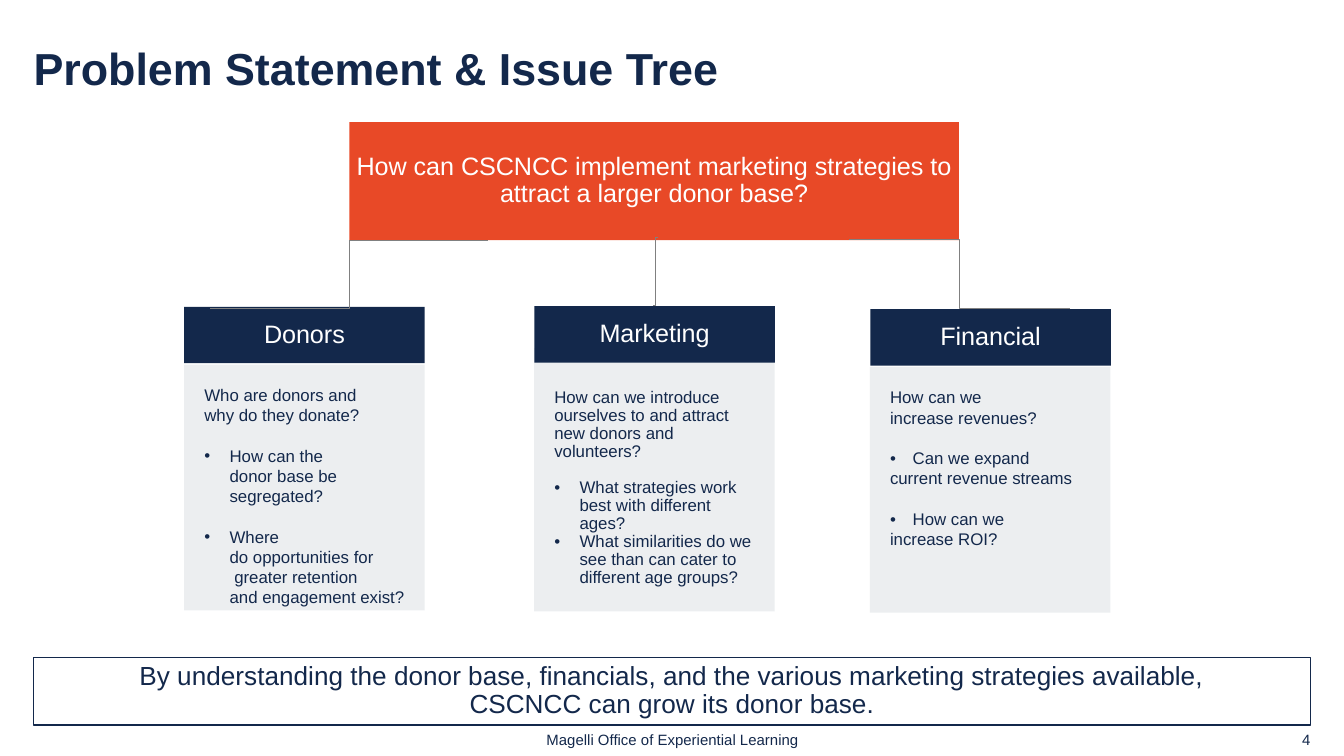
from dataclasses import dataclass
from typing import NamedTuple

from lxml import etree
from pptx import Presentation
from pptx.dml.color import RGBColor
from pptx.enum.shapes import MSO_CONNECTOR, MSO_SHAPE
from pptx.enum.text import MSO_ANCHOR, MSO_AUTO_SIZE, PP_ALIGN
from pptx.oxml.ns import qn
from pptx.util import Inches, Pt

LEFT, MID, RIGHT = PP_ALIGN.LEFT, PP_ALIGN.CENTER, PP_ALIGN.RIGHT
TOP, CENTER = MSO_ANCHOR.TOP, MSO_ANCHOR.MIDDLE
RECT, ELBOW = MSO_SHAPE.RECTANGLE, MSO_CONNECTOR.ELBOW
FIXED = MSO_AUTO_SIZE.NONE

# The slide is a grid of square cells.
COLS, ROWS, CELL = 100, 56.25, Inches(0.1)
# In the wording below, ~ is a no-break space and _ an em space.
SPACES = str.maketrans({"~": chr(160), "_": chr(8195)})


@dataclass(frozen=True)
class Theme:
    face: str = "Arial"
    navy: str = "13284B"
    coral: str = "E84927"
    white: str = "FFFFFF"
    gray: str = "808080"
    tint: int = 8
    title: float = 24
    close: float = 14
    head: float = 13.5
    body: float = 9
    foot: float = 8


class Box(NamedTuple):
    x: float
    y: float
    w: float
    h: float


class Para(NamedTuple):
    text: str
    gap: float = 0
    dot: bool = False


class Style(NamedTuple):
    size: float
    color: str
    align: PP_ALIGN = LEFT
    anchor: MSO_ANCHOR = CENTER
    inset: tuple = (0, 0, 0, 0)
    lead: float = 1
    bold: bool = False


class Card(NamedTuple):
    name: str
    head: Box
    body: Box
    paras: list
    pad: float = 1.5
    lead: float = 1


class Link(NamedTuple):
    x1: float
    y1: float
    x2: float
    y2: float


THEME = Theme()
GAP = 10.9
HANG = 1.88
HEAD = Style(THEME.head, THEME.white, MID, inset=(0.4,) * 4, lead=0.9)

CARDS = [
    Card("Donors", Box(13.7, 22.83, 17.9, 4.2), Box(13.7, 27.13, 17.9, 18.3), [
        Para("Who are donors and why~do they donate?"),
        Para("How can the donor~base be segregated?", GAP, True),
        Para("Where do~opportunities~for ~greater retention "
             "and~engagement exist?", GAP, True),
    ]),
    Card("Marketing", Box(39.75, 22.78, 17.9, 4.2),
         Box(39.74, 25.9, 17.9, 19.6), [
        Para("How can we introduce ourselves~to~and attract new donors "
             "and volunteers?"),
        Para("What strategies work best with different ages?", 9.7, True),
        Para("What similarities do we see than can cater to different "
             "age groups?", 0, True),
    ], pad=3.07, lead=0.89),
    Card("Financial", Box(64.75, 23, 17.9, 4.2), Box(64.72, 27.3, 17.9, 18.3), [
        Para("How can we increase~revenues?"),
        Para("•_Can we expand current~revenue streams", GAP),
        Para("•_How can we increase~ROI?", GAP),
    ]),
]

LINKS = [
    Link(36.3, 17.9, 15.65, 22.93),
    Link(63.2, 17.8, 79.6, 22.97),
    Link(49, 17.7, 48.6, 22.7),
]


def cells(*nums: float) -> list:
    return [round(n * CELL) for n in nums]


def put(item, values: dict) -> None:
    """Set each named attribute of item."""
    for name, value in values.items():
        setattr(item, name, value)


def bullet(para) -> None:
    props = para._p.get_or_add_pPr()
    hang, = cells(HANG)
    props.set("marL", str(hang))
    props.set("indent", str(-hang))
    etree.SubElement(props, qn("a:buFont")).set("typeface", THEME.face)
    etree.SubElement(props, qn("a:buChar")).set("char", "•")


def write(shape, paras: list, style: Style) -> None:
    frame = shape.text_frame
    left, top, right, low = cells(*style.inset)
    put(frame, dict(word_wrap=True, auto_size=FIXED,
                    vertical_anchor=style.anchor, margin_left=left,
                    margin_top=top, margin_right=right, margin_bottom=low))
    for i, item in enumerate(paras):
        para = frame.add_paragraph() if i else frame.paragraphs[0]
        put(para, dict(text=item.text.translate(SPACES),
                       alignment=style.align, line_spacing=style.lead,
                       space_before=Pt(item.gap)))
        if item.dot:
            bullet(para)
        for run in para.runs:
            put(run.font, dict(name=THEME.face, size=Pt(style.size),
                               bold=style.bold))
            run.font.color.rgb = RGBColor.from_string(style.color)


def label(slide, box: Box, text: str, style: Style) -> None:
    write(slide.shapes.add_textbox(*cells(*box)), [Para(text)], style)


def block(slide, box: Box, paras: list, style: Style, fill: str = "",
          tint: int = 100, edge: str = "") -> None:
    """Draw a text rectangle; tint is the fill's opacity in percent."""
    shape = slide.shapes.add_shape(RECT, *cells(*box))
    shape.shadow.inherit = False
    if fill:
        shape.fill.solid()
        shape.fill.fore_color.rgb = RGBColor.from_string(fill)
        if tint < 100:
            color = shape.fill._xPr.find(".//" + qn("a:srgbClr"))
            etree.SubElement(color, qn("a:alpha")).set("val", str(tint * 1000))
    else:
        shape.fill.background()
    if edge:
        shape.line.color.rgb = RGBColor.from_string(edge)
        shape.line.width = Pt(0.75)
    else:
        shape.line.fill.background()
    write(shape, paras, style)


def join(slide, link: Link) -> None:
    line = slide.shapes.add_connector(ELBOW, *cells(*link))
    line.line.color.rgb = RGBColor.from_string(THEME.gray)
    line.line.width = Pt(0.5)
    etree.SubElement(line._element.spPr, qn("a:effectLst"))


def main() -> None:
    deck = Presentation()
    wide, high = cells(COLS, ROWS)
    put(deck, dict(slide_width=wide, slide_height=high))
    slide = deck.slides.add_slide(deck.slide_layouts[5])

    title = slide.shapes.title
    put(title, dict(zip(("left", "top", "width", "height"),
                        cells(2.5, 2.3, 95, 6))))
    write(title, [Para("Problem Statement & Issue Tree")],
          Style(THEME.title, THEME.navy, inset=(0, 0, 12, 0), lead=0.9,
                bold=True))

    block(slide, Box(26, 9.1, 45.35, 8.77),
          [Para("How can~CSCNCC implement marketing strategies to attract "
                "a larger donor base?")], HEAD, THEME.coral)
    for card in CARDS:
        block(slide, card.head, [Para(card.name)], HEAD, THEME.navy)
        block(slide, card.body, card.paras,
              Style(THEME.body, THEME.navy, anchor=TOP, lead=card.lead,
                    inset=(1.5, card.pad, 1.5, 1.5)), THEME.navy, THEME.tint)
    for link in LINKS:
        join(slide, link)

    block(slide, Box(2.5, 48.95, 95, 5),
          [Para("By understanding the donor base, financials, and the various "
                "marketing strategies available, CSCNCC can grow its donor "
                "base.")],
          Style(THEME.close, THEME.navy, MID, inset=(5, 1, 5, 1), lead=0.9),
          edge=THEME.navy)
    label(slide, Box(40.3, 54, 19.5, 2), "Magelli Office of Experiential Learning",
          Style(THEME.foot, THEME.navy, MID))
    label(slide, Box(75, 54, 22.5, 2), "4",
          Style(THEME.foot, THEME.navy, RIGHT))
    deck.save("out.pptx")


if __name__ == "__main__":
    main()
